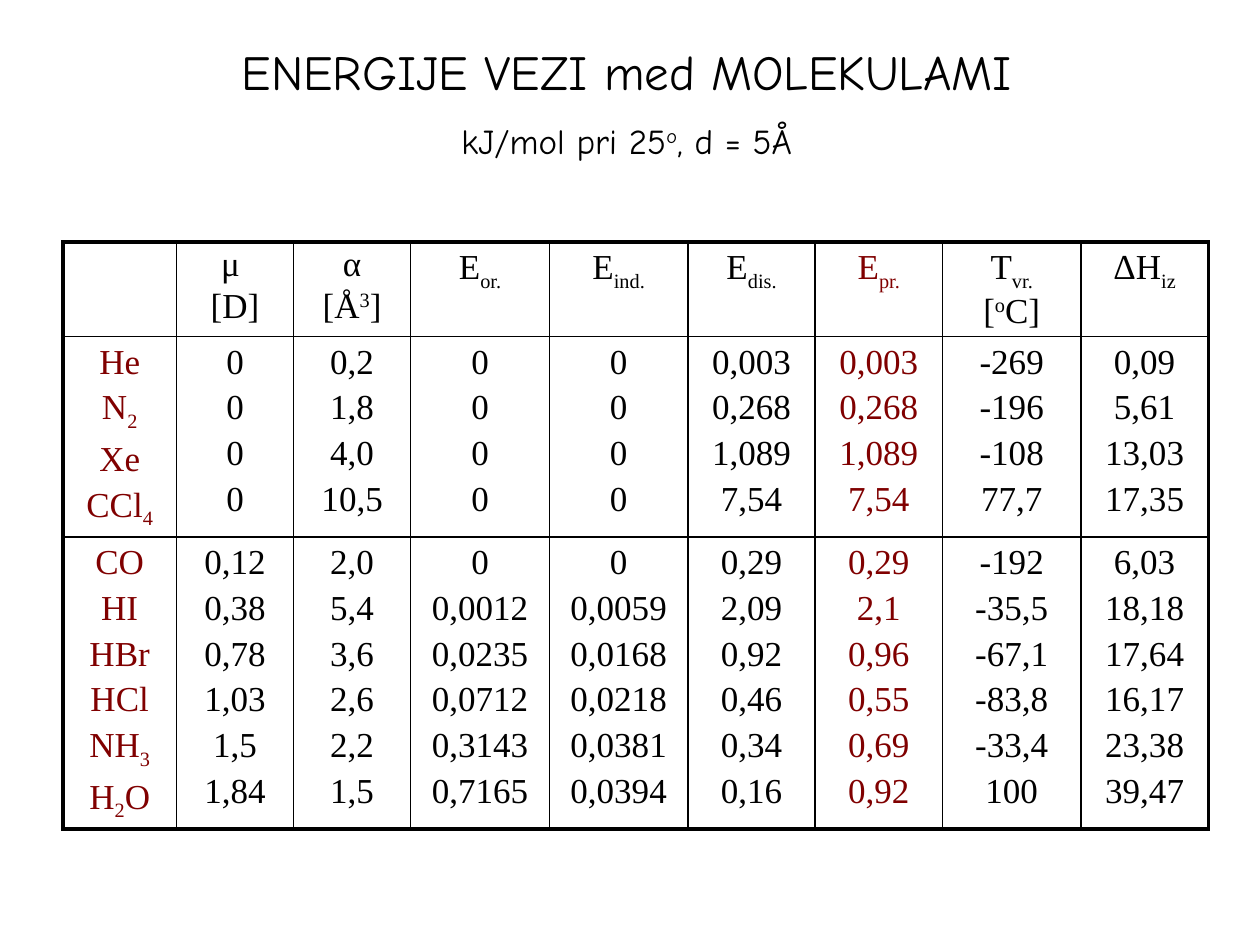
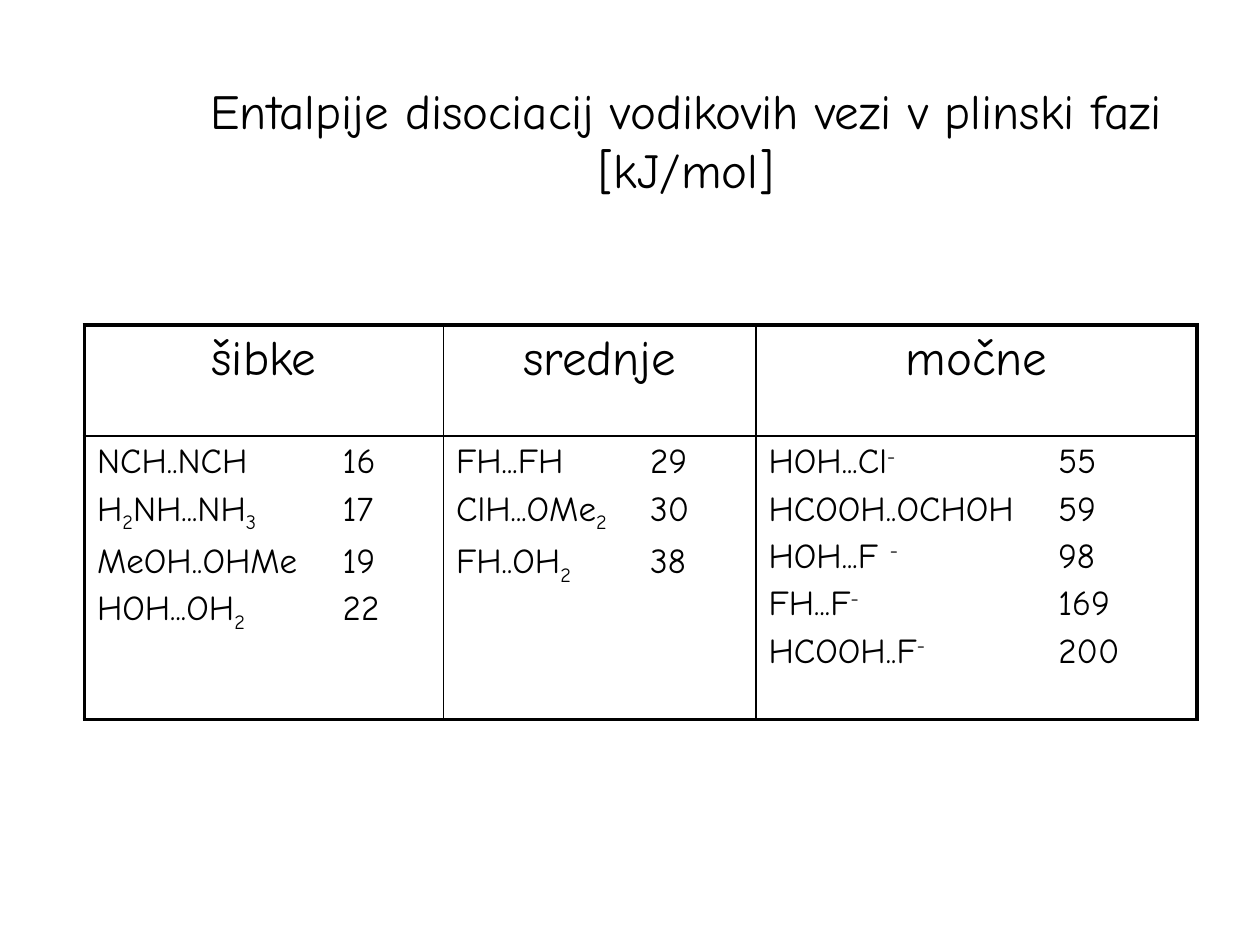
from lxml import etree
from pptx import Presentation
from pptx.dml.color import RGBColor
from pptx.enum import text as txt
from pptx.oxml.ns import qn
from pptx.util import Inches, Pt

BLACK = RGBColor(0x00, 0x00, 0x00)
MAROON = RGBColor(0x80, 0x00, 0x00)
HAND_FONT = "Comic Neue"
SERIF_FONT = "Times New Roman"
TITLE_SIZE, TEXT_SIZE = 28, 20
FRAME_WIDTH, GRID_WIDTH = 2.25, 1
CENTER, LEFT = txt.PP_ALIGN.CENTER, txt.PP_ALIGN.LEFT
BASELINES = {"_": "-25000", "^": "30000"}


def write(frame, lines, size=TEXT_SIZE, font=HAND_FONT, color=BLACK, align=CENTER,
          spacing=1.0, before=0, tab=None):
    """Fill a text frame; {_x} is subscript, {^x} superscript, before a percentage."""
    for number, line in enumerate(lines):
        paragraph = frame.add_paragraph() if number else frame.paragraphs[0]
        paragraph.alignment = align
        paragraph.line_spacing = spacing
        paragraph.space_before = Pt(0)
        properties = paragraph._p.get_or_add_pPr()
        space = properties.find(qn("a:spcBef"))
        space.clear()
        etree.SubElement(space, qn("a:spcPct"), val=str(before * 1000))
        if tab:
            stops = etree.SubElement(properties, qn("a:tabLst"))
            etree.SubElement(stops, qn("a:tab"), pos=str(Inches(tab)), algn="l")
        for piece in line.replace("}", "{").split("{"):
            if not piece:
                continue
            baseline = BASELINES.get(piece[0])
            run = paragraph.add_run()
            run.text = piece[1:] if baseline else piece
            run.font.size, run.font.name = Pt(size), font
            run.font.color.rgb = color
            if baseline:
                run._r.get_or_add_rPr().set("baseline", baseline)


def add_grid(slide, left, top, widths, heights):
    """Add an unfilled table with a heavy frame and thin inner lines."""
    grid = slide.shapes.add_table(len(heights), len(widths), Inches(left), Inches(top),
                                  Inches(sum(widths)), Inches(sum(heights))).table
    grid.first_row = grid.horz_banding = False
    for column, width in zip(grid.columns, widths):
        column.width = Inches(width)
    for row, height in zip(grid.rows, heights):
        row.height = Inches(height)
    for r in range(len(heights)):
        for c in range(len(widths)):
            cell = grid.cell(r, c)
            outer = {"lnL": c == 0, "lnR": c == len(widths) - 1,
                     "lnT": r == 0, "lnB": r == len(heights) - 1}
            for side, on_frame in outer.items():
                width = Pt(FRAME_WIDTH if on_frame else GRID_WIDTH)
                border = etree.SubElement(cell._tc.get_or_add_tcPr(), qn(f"a:{side}"),
                                          w=str(width))
                fill = etree.SubElement(border, qn("a:solidFill"))
                etree.SubElement(fill, qn("a:srgbClr"), val=str(BLACK))
            cell.fill.background()
    return grid


prs = Presentation()
prs.slide_width, prs.slide_height = Inches(10), Inches(7.5)

slides, titles = [], []
for left, top, height in [(0.25, 0.42, 0.89), (0.72, 0.59, 1.03)]:
    slide = prs.slides.add_slide(prs.slide_layouts[5])
    title = slide.shapes.title
    title.left, title.top = Inches(left), Inches(top)
    title.width, title.height = Inches(9.45), Inches(height)
    title.text_frame.auto_size = txt.MSO_AUTO_SIZE.NONE
    title.text_frame.vertical_anchor = txt.MSO_ANCHOR.MIDDLE
    slides.append(slide)
    titles.append(title.text_frame)

# Slide 1: bond energies between molecules
write(titles[0], ["ENERGIJE VEZI med MOLEKULAMI", "kJ/mol pri 25{^o}, d = 5Å"],
      size=TITLE_SIZE, spacing=0.7)
conditions = titles[0].paragraphs[1]
conditions.space_before = Pt(18)
for run in conditions.runs:
    run.font.size = Pt(TEXT_SIZE)

# Each column: width, heading lines, nonpolar values, polar values
energy_columns = [
    (0.9, [], "He N{_2} Xe CCl{_4}", "CO HI HBr HCl NH{_3} H{_2}O"),
    (0.93, ["μ ", "[D]"], "0 0 0 0", "0,12 0,38 0,78 1,03 1,5 1,84"),
    (0.93, ["α", "[Å{^3}]"], "0,2 1,8 4,0 10,5", "2,0 5,4 3,6 2,6 2,2 1,5"),
    (1.1, ["E{_or.}"], "0 0 0 0", "0 0,0012 0,0235 0,0712 0,3143 0,7165"),
    (1.1, ["E{_ind.}"], "0 0 0 0", "0 0,0059 0,0168 0,0218 0,0381 0,0394"),
    (1.01, ["E{_dis.}"], "0,003 0,268 1,089 7,54", "0,29 2,09 0,92 0,46 0,34 0,16"),
    (1.01, ["E{_pr.}"], "0,003 0,268 1,089 7,54", "0,29 2,1 0,96 0,55 0,69 0,92"),
    (1.1, ["T{_vr.}", "[{^o}C]"], "-269 -196 -108 77,7", "-192 -35,5 -67,1 -83,8 -33,4 100"),
    (1.01, ["ΔH{_iz}"], "0,09 5,61 13,03 17,35", "6,03 18,18 17,64 16,17 23,38 39,47"),
]
highlighted = (0, 6)
energies = add_grid(slides[0], 0.5, 1.92, [column[0] for column in energy_columns],
                    [0.75, 1.59, 2.32])
for c, (_, heading, nonpolar, polar) in enumerate(energy_columns):
    color = MAROON if c in highlighted else BLACK
    for r, lines in enumerate([heading, nonpolar.split(), polar.split()]):
        write(energies.cell(r, c).text_frame, lines, font=SERIF_FONT, color=color,
              spacing=1.0 if r else 0.9, before=20)

# Slide 2: hydrogen bond dissociation enthalpies
write(titles[1], ["Entalpije disociacij vodikovih vezi v plinski fazi", "[kJ/mol]"],
      size=TITLE_SIZE)

# Each column: width, tab stop of the values, strength, bonds with values
bond_columns = [
    (2.85, 1.95, "šibke", ["NCH..NCH\t16", "H{_2}NH...NH{_3}\t17",
                           "MeOH..OHMe\t19", "HOH...OH{_2}\t22"]),
    (2.48, 1.54, "srednje", ["FH...FH\t29", "ClH...OMe{_2}\t30", "FH..OH{_2}\t38"]),
    (3.5, 2.3, "močne", ["HOH...Cl{^-}\t55", "HCOOH..OCHOH\t59", "HOH...F {^-}\t98",
                         "FH...F{^-}\t169", "HCOOH..F{^-}\t200"]),
]
enthalpies = add_grid(slides[1], 0.67, 2.58, [column[0] for column in bond_columns],
                      [0.88, 2.25])
for c, (_, tab, strength, bonds) in enumerate(bond_columns):
    write(enthalpies.cell(0, c).text_frame, [strength], size=TITLE_SIZE, before=20)
    write(enthalpies.cell(1, c).text_frame, bonds, align=LEFT, before=20, tab=tab)

prs.save("out.pptx")
